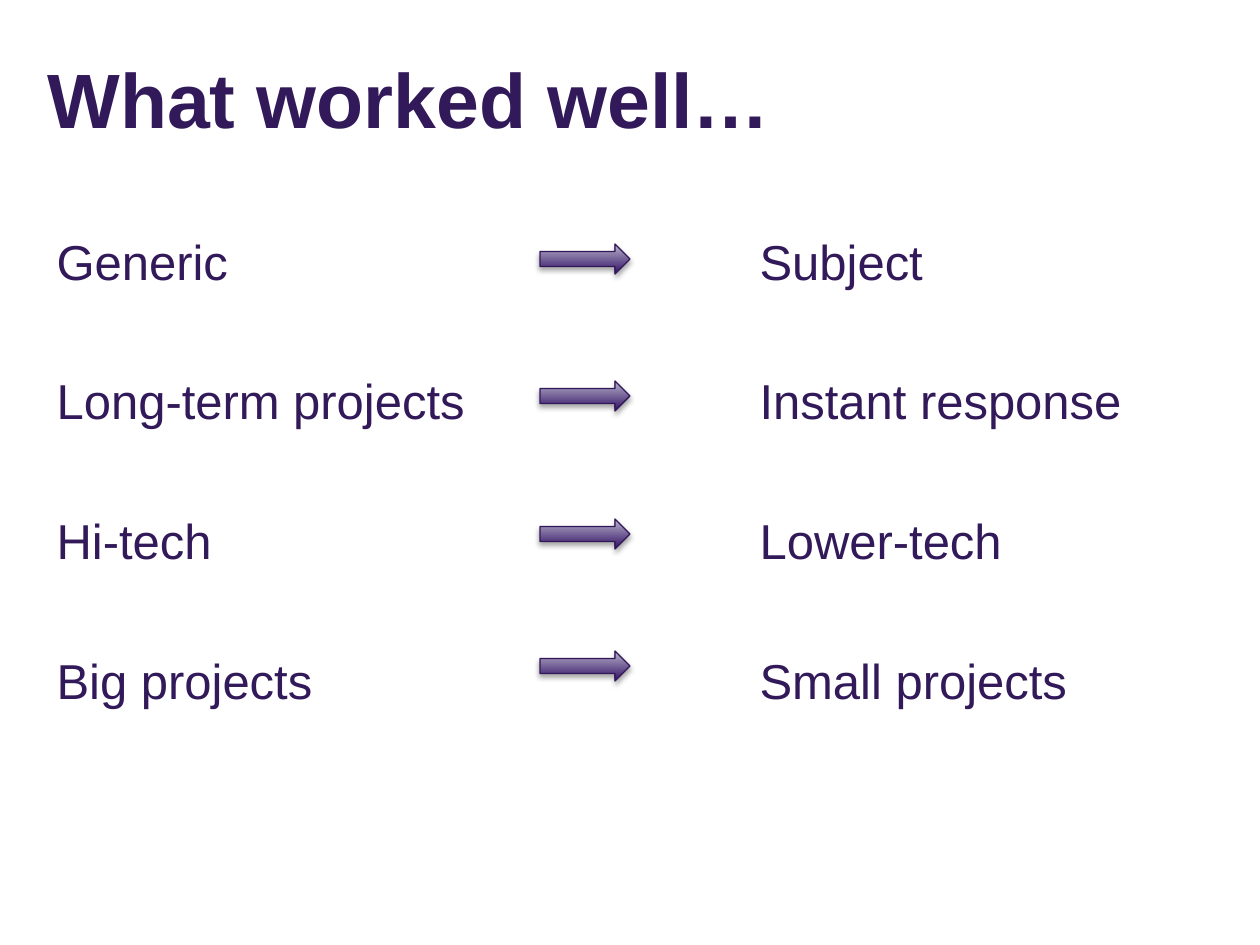
from dataclasses import dataclass

from lxml import etree
from pptx import Presentation, util as u
from pptx.dml.color import RGBColor as Rgb
from pptx.enum import shapes, text
from pptx.oxml import ns

SCALE = 914400 / 126


def px(n):
    return u.Emu(round(n * SCALE))


@dataclass(frozen=True)
class Theme:
    font: str = "Arial"
    ink: str = "321959"
    edge: str = "311759"
    dark: str = "300F63"
    light: str = "BAB5CC"
    shade: str = "000000"
    head: int = 44
    body: int = 28
    gap: float = 46.3


class Deck:
    def __init__(self, theme):
        self.theme = theme
        self.prs = Presentation()
        self.prs.slide_width, self.prs.slide_height = px(1260), px(945)
        self.slide = self.prs.slides.add_slide(self.prs.slide_layouts[3])

    def frame(self, idx, box, top):
        """Move a placeholder and return its text frame, anchored to the top."""
        holder = self.slide.placeholders[idx]
        holder.left, holder.top, holder.width, holder.height = map(px, box)
        frame = holder.text_frame
        frame.word_wrap = True
        frame.auto_size = text.MSO_AUTO_SIZE.NONE
        frame.vertical_anchor = text.MSO_ANCHOR.TOP
        frame.margin_top = px(top)
        return frame

    def add_words(self, para, words, size, bold=False):
        para.alignment = text.PP_ALIGN.LEFT
        run = para.add_run()
        run.text = words
        font = run.font
        font.name, font.size, font.bold = self.theme.font, u.Pt(size), bold
        font.color.rgb = Rgb.from_string(self.theme.ink)

    def title(self, words, box):
        frame = self.frame(0, box, 14)
        self.add_words(frame.paragraphs[0], words, self.theme.head, True)

    def items(self, idx, lines, box):
        frame = self.frame(idx, box, 11)
        for i, line in enumerate(lines):
            para = frame.add_paragraph() if i else frame.paragraphs[0]
            props = para._p.get_or_add_pPr()
            props.set("marL", "0")
            props.set("indent", "0")
            etree.SubElement(props, ns.qn("a:buNone"))
            para.space_before = u.Pt(self.theme.gap if i else 0)
            self.add_words(para, line, self.theme.body)

    def arrow(self, x, y, w, h):
        shape = self.slide.shapes.add_shape(
            shapes.MSO_SHAPE.RIGHT_ARROW, px(x), px(y), px(w), px(h))
        shape.fill.gradient()
        shape.fill.gradient_angle = 90
        tones = (self.theme.dark, self.theme.light)
        for pos, (stop, tone) in enumerate(zip(shape.fill.gradient_stops, tones)):
            stop.position = pos
            stop.color.rgb = Rgb.from_string(tone)
        shape.line.color.rgb = Rgb.from_string(self.theme.edge)
        shape.line.width = u.Pt(0.75)
        self.shadow(shape)

    def shadow(self, shape):
        shape.shadow.inherit = False
        group = shape._element.spPr.find(ns.qn("a:effectLst"))
        outer = etree.SubElement(
            group, ns.qn("a:outerShdw"), blurRad=str(int(u.Pt(3.1))),
            dist=str(int(u.Pt(1.8))), dir="5400000", rotWithShape="0")
        color = etree.SubElement(outer, ns.qn("a:srgbClr"), val=self.theme.shade)
        etree.SubElement(color, ns.qn("a:alpha"), val="35000")


def main():
    deck = Deck(Theme())
    deck.title("What worked well…", (35, 38, 1154, 157))
    rows = [
        ("Generic", "Subject", 244),
        ("Long-term projects", "Instant response", 381),
        ("Hi-tech", "Lower-tech", 519),
        ("Big projects", "Small projects", 651),
    ]
    before, after, tops = zip(*rows)
    deck.items(1, before, (44, 220, 575, 624))
    deck.items(2, after, (747, 220, 567, 529))
    for top in tops:
        deck.arrow(540, top, 90, 30)
    deck.prs.save("out.pptx")


if __name__ == "__main__":
    main()
